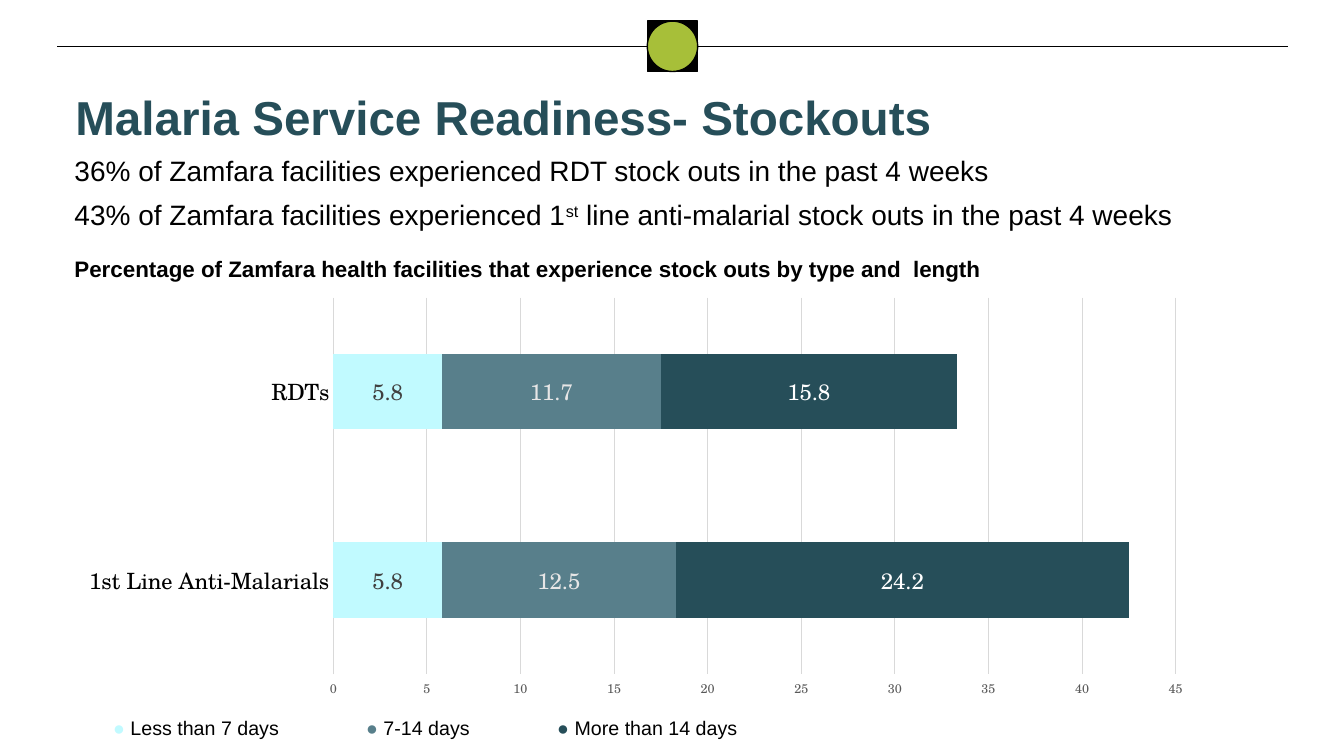
import pptx
import pptx.util
import pptx.chart.data
import pptx.dml.color
import pptx.enum.chart
import pptx.enum.shapes
import pptx.enum.text
import pptx.oxml
import pptx.oxml.ns
import lxml.etree

Inches, Pt = pptx.util.Inches, pptx.util.Pt
COLORS = {
    "black": "000000", "white": "FFFFFF", "lime": "A7BF39",
    "teal": "264E59", "slate": "587F8B", "aqua": "C1FAFF",
    "grid": "D9D9D9", "tick": "595959", "dark": "404040", "pale": "E7E6E6",
}


def rgb(name):
    return pptx.dml.color.RGBColor.from_string(COLORS[name])


class Deck:
    sans = "Arial"
    serif = "TeX Gyre Schola"

    def __init__(self):
        self.prs = pptx.Presentation()
        self.prs.slide_width = Inches(13.33)
        self.prs.slide_height = Inches(7.5)
        self.slide = self.prs.slides.add_slide(self.prs.slide_layouts[6])
        self.shapes = self.slide.shapes

    def font(self, font, size, color, face, bold=False):
        font.size, font.name, font.bold = Pt(size), face, bold
        font.color.rgb = rgb(color)

    def run(self, para, text, size, color, bold=False, base=0):
        run = para.add_run()
        run.text = text
        self.font(run.font, size, color, self.sans, bold)
        if base:
            run.font._element.set("baseline", str(base * 1000))

    def line(self, x, y, end):
        rule = self.shapes.add_connector(
            pptx.enum.shapes.MSO_CONNECTOR.STRAIGHT,
            Inches(x), Inches(y), Inches(end), Inches(y))
        rule.line.color.rgb = rgb("black")
        rule.line.width = Pt(0.75)
        lxml.etree.SubElement(rule._element.spPr, pptx.oxml.ns.qn("a:effectLst"))

    def shape(self, kind, x, y, size, fill):
        shape = self.shapes.add_shape(
            kind, Inches(x), Inches(y), Inches(size), Inches(size))
        shape.shadow.inherit = False
        shape.fill.solid()
        shape.fill.fore_color.rgb = rgb(fill)
        shape.line.color.rgb = rgb("black")
        shape.line.width = Pt(1)

    def text(self, box, paras, size, color="black", bold=False, after=0, lead=1.0):
        frame = self.shapes.add_textbox(*map(Inches, box)).text_frame
        frame.word_wrap = True
        for i, runs in enumerate(paras):
            para = frame.add_paragraph() if i else frame.paragraphs[0]
            para.space_after = Pt(after)
            para.line_spacing = lead
            for text, base in runs:
                self.run(para, text, size, color, bold, base)

    def key(self, box, widths, items):
        table = self.shapes.add_table(1, len(items), *map(Inches, box)).table
        table.first_row = table.horz_banding = False
        for i, (label, color) in enumerate(items):
            table.columns[i].width = Inches(widths[i])
            cell = table.cell(0, i)
            cell.fill.background()
            cell.vertical_anchor = pptx.enum.text.MSO_ANCHOR.MIDDLE
            para = cell.text_frame.paragraphs[0]
            para.alignment = pptx.enum.text.PP_ALIGN.CENTER
            self.run(para, "● ", 14, color)
            self.run(para, label, 14, "black")

    def chart(self, box, cats, series, plot):
        data = pptx.chart.data.CategoryChartData(number_format="#,##0.0")
        data.categories = cats
        for i, (vals, _, _) in enumerate(series, 1):
            data.add_series(f"Series {i}", vals)
        enum = pptx.enum.chart
        chart = self.shapes.add_chart(
            enum.XL_CHART_TYPE.BAR_STACKED, *map(Inches, box), data).chart
        chart.has_legend = chart.has_title = False
        self.font(chart.font, 10, "black", self.serif)

        # Bars and value labels
        bars = chart.plots[0]
        bars.gap_width, bars.overlap, bars.vary_by_categories = 150, 100, False
        for bar, (_, fill, ink) in zip(bars.series, series):
            bar.format.fill.solid()
            bar.format.fill.fore_color.rgb = rgb(fill)
            labels = bar.data_labels
            labels.show_value = True
            labels.number_format = "#,##0.0"
            labels.number_format_is_linked = False
            labels.position = enum.XL_LABEL_POSITION.CENTER
            self.font(labels.font, 16, ink, self.serif)

        # Axes
        cat, val = chart.category_axis, chart.value_axis
        for axis, size, color in ((cat, 16, "black"), (val, 9, "tick")):
            axis.major_tick_mark = axis.minor_tick_mark = enum.XL_TICK_MARK.NONE
            self.font(axis.tick_labels.font, size, color, self.serif)
        val.minimum_scale, val.maximum_scale, val.major_unit = 0, 45, 5
        val.tick_labels.number_format = "0"
        val.tick_labels.number_format_is_linked = False
        val.format.line.fill.background()
        val.has_major_gridlines = True
        for line in (cat.format.line, val.major_gridlines.format.line):
            line.color.rgb = rgb("grid")
            line.width = Pt(0.75)

        # Fixed plot area
        area = chart._chartSpace.chart.plotArea
        for old in area.findall(pptx.oxml.ns.qn("c:layout")):
            area.remove(old)
        parts = '<c:layoutTarget val="inner"/>'
        parts += "".join(f'<c:{n}Mode val="edge"/>' for n in "xy")
        parts += "".join(f'<c:{n} val="{v}"/>' for n, v in zip("xywh", plot))
        area.insert(0, pptx.oxml.parse_xml(
            f'<c:layout {pptx.oxml.ns.nsdecls("c")}>'
            f"<c:manualLayout>{parts}</c:manualLayout></c:layout>"))


def main():
    deck = Deck()
    kinds = pptx.enum.shapes.MSO_SHAPE

    # Top rule with badge
    deck.line(0.57, 0.46, 12.77)
    for kind, fill in ((kinds.RECTANGLE, "black"), (kinds.OVAL, "lime")):
        deck.shape(kind, 6.42, 0.21, 0.5, fill)

    # Title and findings
    deck.text((0.65, 0.77, 9.96, 0.91),
              [[("Malaria Service Readiness- Stockouts", 0)]],
              34, "teal", True, after=8, lead=1.1)
    deck.text((0.64, 1.45, 12.09, 0.86), [
        [("36% of Zamfara facilities experienced RDT stock outs in the past 4 weeks", 0)],
        [("43% of Zamfara facilities experienced 1", 0), ("st", 30),
         (" line anti-malarial stock outs in the past 4 weeks", 0)],
    ], 20, after=6, lead=1.07)
    deck.text((0.64, 2.48, 11.53, 0.37), [[(
        "Percentage of Zamfara health facilities that experience "
        "stock outs by type and  length", 0)]], 16, bold=True)

    # Key and chart
    deck.key((0.82, 7.06, 6.8, 0.33), (2.25, 2.15, 2.4), [
        ("Less than 7 days", "aqua"), ("7-14 days", "slate"),
        ("More than 14 days", "teal")])
    deck.chart((0.71, 2.87, 11.29, 4.11), ("1st Line Anti-Malarials", "RDTs"), [
        ((5.8, 5.8), "aqua", "dark"),
        ((12.5, 11.7), "slate", "pale"),
        ((24.2, 15.8), "teal", "white"),
    ], plot=(0.23, 0.02, 0.74, 0.91))

    deck.prs.save("out.pptx")


if __name__ == "__main__":
    main()
